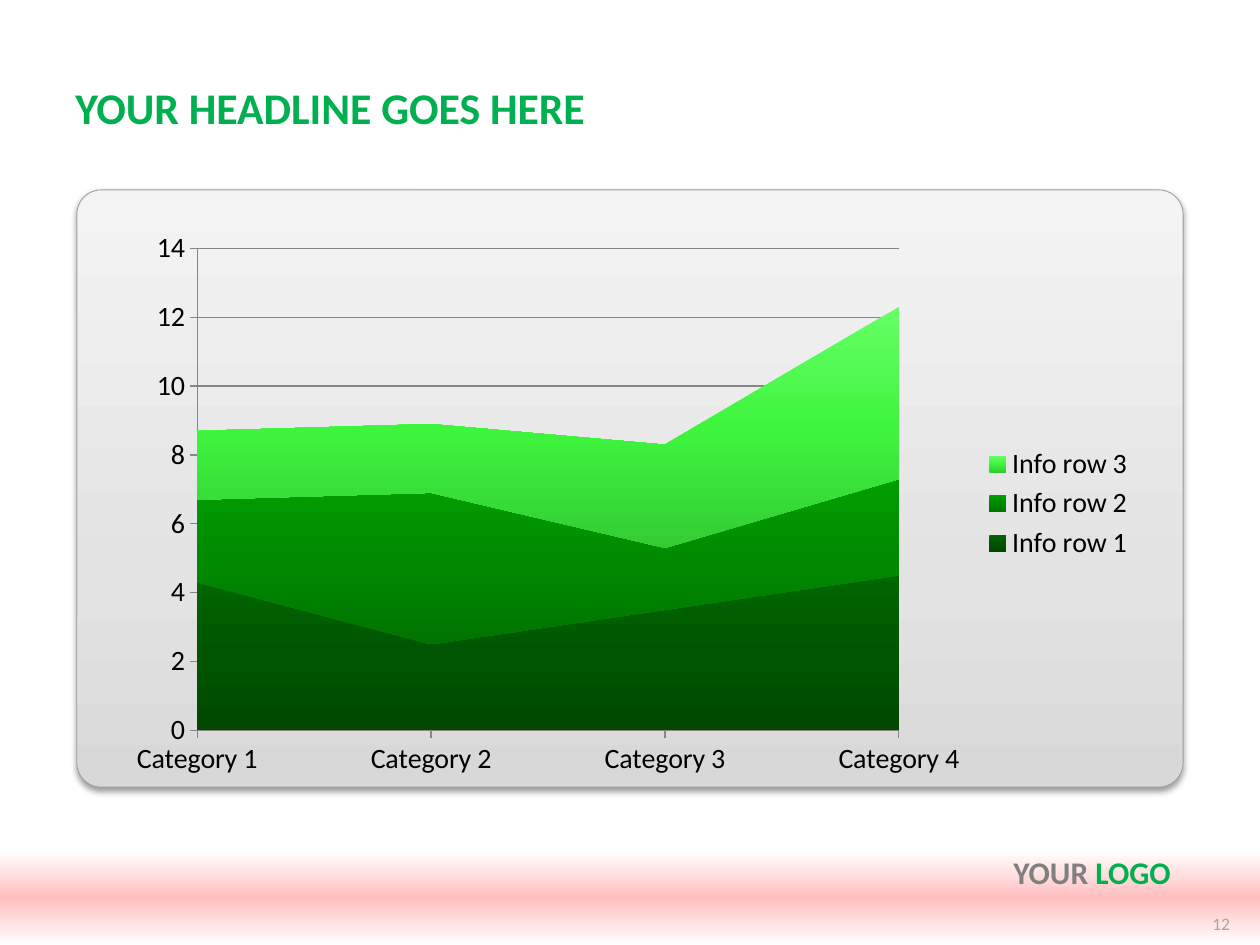
from copy import deepcopy

from lxml import etree
from pptx import Presentation
from pptx.chart.data import CategoryChartData
from pptx.dml.color import RGBColor
from pptx.enum.chart import XL_CHART_TYPE, XL_LEGEND_POSITION, XL_TICK_MARK
from pptx.enum.shapes import MSO_SHAPE
from pptx.enum.text import MSO_ANCHOR, PP_ALIGN
from pptx.oxml import parse_xml
from pptx.oxml.ns import nsdecls, qn
from pptx.util import Inches, Pt

AREA = XL_CHART_TYPE.AREA_STACKED
SIDE = XL_LEGEND_POSITION.RIGHT
CROSS = XL_TICK_MARK.CROSS
ROUND, RECT = MSO_SHAPE.ROUNDED_RECTANGLE, MSO_SHAPE.RECTANGLE
LEFT, RIGHT = PP_ALIGN.LEFT, PP_ALIGN.RIGHT
TOP = MSO_ANCHOR.TOP

WIDE, HIGH = Inches(10), Inches(7.5)
FONT = "Calibri"
HEX = {
    "green": "00B050", "gray": "808080", "pale": "A6A6A6", "black": "000000",
    "edge": "A1A1A1", "grid": "868686", "white": "FFFFFF", "pink": "FFBFBF",
    "low": "D8D8D8", "mid": "E3E3E3", "high": "F4F4F4",
}
CATS = [f"Category {n}" for n in range(1, 5)]
ROWS = [
    ("Info row 1", (4.3, 2.5, 3.5, 4.5), ("006600", "005600", "004800")),
    ("Info row 2", (2.4, 4.4, 1.8, 2.8), ("009E00", "008A00", "007400")),
    ("Info row 3", (2, 2, 3, 5), ("66FF66", "3EF53E", "33CC33")),
]


def rgb(code):
    """Turn a hex string into a colour."""
    return RGBColor.from_string(code)


def place(x, y, w, h):
    """Turn shares of the slide into a box of lengths."""
    return int(x * WIDE), int(y * HIGH), int(w * WIDE), int(h * HIGH)


def blend(fill, root, codes, spots, angle):
    """Give a fill three colour stops along an angle."""
    fill.gradient()
    fill.gradient_angle = angle
    stops = next(root.iter(qn("a:gsLst")))
    stops.append(deepcopy(stops[-1]))
    for stop, code, spot in zip(fill.gradient_stops, codes, spots):
        stop.color.rgb = rgb(code)
        stop.position = spot


def style(font, size, code, bold=False):
    """Set the face, size, colour and weight of a font."""
    font.name, font.size, font.bold = FONT, Pt(size), bold
    font.color.rgb = rgb(code)


def label(slide, box, parts, size, align, bold=False):
    """Write one line of coloured parts in a box."""
    frame = slide.shapes.add_textbox(*box).text_frame
    frame.word_wrap = True
    frame.vertical_anchor = TOP
    line = frame.paragraphs[0]
    line.alignment = align
    for text, tone in parts:
        run = line.add_run()
        run.text = text
        style(run.font, size, HEX[tone], bold)


def panel(slide, box):
    """Draw the rounded gray panel with its soft shadow."""
    card = slide.shapes.add_shape(ROUND, *box)
    card.adjustments[0] = 0.041
    tones = [HEX[key] for key in ("low", "mid", "high")]
    blend(card.fill, card.element, tones, (0, 0.35, 1), 90)
    card.line.color.rgb = rgb(HEX["edge"])
    card.line.width = Pt(0.5)
    card.element.spPr.append(parse_xml(
        f'<a:effectLst {nsdecls("a")}><a:outerShdw blurRad="{Pt(3.5)}" '
        f'dist="{Pt(2)}" dir="5400000" rotWithShape="0">'
        f'<a:srgbClr val="{HEX["black"]}"><a:alpha val="38000"/></a:srgbClr>'
        '</a:outerShdw></a:effectLst>'))


def band(slide, box):
    """Draw the pink band that fades to white above and below."""
    strip = slide.shapes.add_shape(RECT, *box)
    strip.shadow.inherit = False
    strip.line.fill.background()
    tones = [HEX[key] for key in ("white", "pink", "white")]
    blend(strip.fill, strip.element, tones, (0, 0.5, 1), 270)


def fix(chart, x, y, w, h):
    """Pin the inner plot area to shares of the chart."""
    area = next(chart.element.iter(qn("c:plotArea")))
    for old in area.findall(qn("c:layout")):
        area.remove(old)
    layout = etree.Element(qn("c:layout"))
    spot = etree.SubElement(layout, qn("c:manualLayout"))
    marks = [("layoutTarget", "inner"), ("xMode", "edge"), ("yMode", "edge"),
             ("x", x), ("y", y), ("w", w), ("h", h)]
    for name, value in marks:
        etree.SubElement(spot, qn(f"c:{name}")).set("val", str(value))
    area.insert(0, layout)


def graph(slide, box):
    """Build the stacked area chart with axes and legend."""
    data = CategoryChartData()
    data.categories = CATS
    for name, values, _ in ROWS:
        data.add_series(name, values)
    chart = slide.shapes.add_chart(AREA, *box, data).chart
    chart.has_title = False
    style(chart.font, 18, HEX["black"])
    fix(chart, 0.08, 0.05, 0.68, 0.85)
    plot = chart.plots[0]
    plot.vary_by_categories = False
    for row, (_, _, codes) in zip(plot.series, ROWS):
        blend(row.format.fill, row._element, codes, (0, 0.5, 1), 270)
        row.format.line.fill.background()
    for axis in (chart.category_axis, chart.value_axis):
        style(axis.tick_labels.font, 16, HEX["black"])
        axis.major_tick_mark = CROSS
        axis.format.line.color.rgb = rgb(HEX["grid"])
        axis.format.line.width = Pt(0.75)
    chart.category_axis.has_major_gridlines = False
    axis = chart.value_axis
    axis.minimum_scale, axis.maximum_scale, axis.major_unit = 0, 14, 2
    axis.has_major_gridlines = True
    axis.major_gridlines.format.line.color.rgb = rgb(HEX["grid"])
    axis.major_gridlines.format.line.width = Pt(0.75)
    for cross in chart.element.iter(qn("c:crossBetween")):
        cross.set("val", "midCat")
    chart.has_legend = True
    chart.legend.position = SIDE
    chart.legend.include_in_layout = False
    style(chart.legend.font, 16, HEX["black"])


def main():
    """Build the slide and save it."""
    deck = Presentation()
    deck.slide_width, deck.slide_height = WIDE, HIGH
    slide = deck.slides.add_slide(deck.slide_layouts[6])
    panel(slide, place(0.061, 0.201, 0.878, 0.632))
    band(slide, place(0, 0.9, 1, 0.1))
    label(slide, place(0.05, 0.079, 0.9, 0.073),
          [("YOUR HEADLINE GOES HERE", "green")], 25, LEFT, True)
    graph(slide, place(0.091, 0.233, 0.819, 0.6))
    label(slide, place(0.939, 0.96, 0.047, 0.04), [("12", "pale")], 10, RIGHT)
    label(slide, place(0.05, 0.896, 0.889, 0.073),
          [("YOUR ", "gray"), ("LOGO", "green")], 18, RIGHT, True)
    deck.save("out.pptx")


if __name__ == "__main__":
    main()
